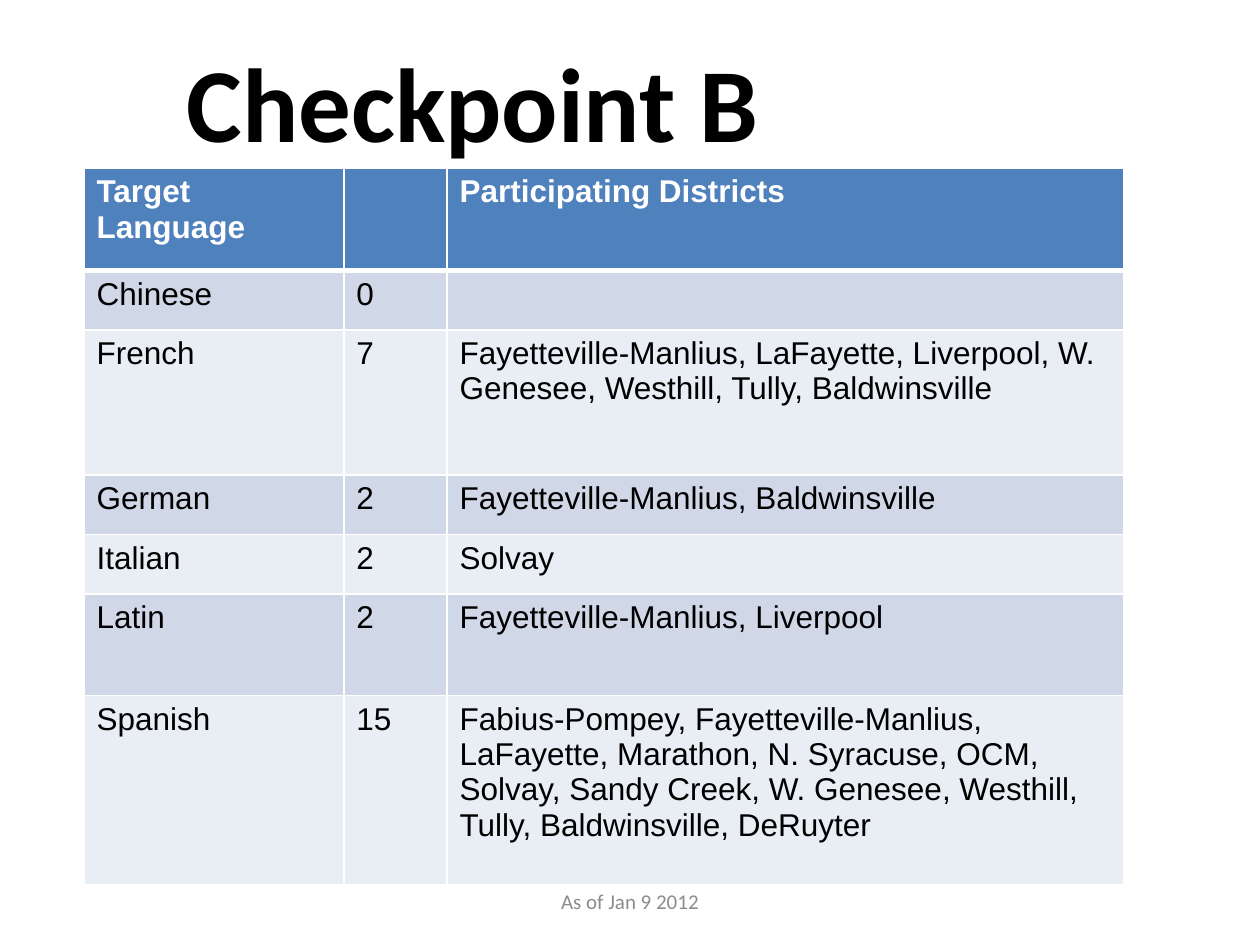
from lxml.etree import SubElement
from pptx import Presentation
from pptx.dml.color import RGBColor
from pptx.enum.text import MSO_ANCHOR as Anchor, MSO_AUTO_SIZE as AutoSize, PP_ALIGN as Align
from pptx.oxml.ns import qn
from pptx.util import Pt

COLORS = {
    "white": "FFFFFF", "black": "000000", "gray": "8C8C8C",
    "header": "4F81BD", "odd": "D0D8E8", "even": "E9EDF4",
}
COLUMN_WIDTHS = [148.5, 59, 386.5]
ROWS = [
    (58.5, "Target Language", "", "Participating Districts"),
    (34, "Chinese", "0", ""),
    (83, "French", "7", "Fayetteville-Manlius, LaFayette, Liverpool, W. Genesee, "
     "Westhill, Tully, Baldwinsville"),
    (34, "German", "2", "Fayetteville-Manlius, Baldwinsville"),
    (34, "Italian", "2", "Solvay"),
    (58, "Latin", "2", "Fayetteville-Manlius, Liverpool"),
    (108, "Spanish", "15", "Fabius-Pompey, Fayetteville-Manlius, LaFayette, Marathon, "
     "N. Syracuse, OCM, Solvay, Sandy Creek, W. Genesee, Westhill, Tully, "
     "Baldwinsville, DeRuyter"),
]


def set_attributes(target, values):
    for name, value in values.items():
        setattr(target, name, value)


def format_font(font, color, **values):
    set_attributes(font, values)
    font.color.rgb = RGBColor.from_string(COLORS[color])


def place_text(shape, box, text, anchor, color, **font_values):
    set_attributes(shape, dict(zip(("left", "top", "width", "height"), map(Pt, box))))
    frame = shape.text_frame
    set_attributes(frame, {"text": text, "word_wrap": True,
                           "auto_size": AutoSize.NONE, "vertical_anchor": anchor})
    paragraph = frame.paragraphs[0]
    paragraph.alignment = Align.CENTER
    format_font(paragraph.runs[0].font, color, name="Calibri", **font_values)


def add_borders(cell, widths):
    properties = cell._tc.get_or_add_tcPr()
    for side, width in widths.items():
        line = SubElement(properties, qn(f"a:ln{side}"), w=str(Pt(width)))
        fill = SubElement(line, qn("a:solidFill"))
        SubElement(fill, qn("a:srgbClr"), val=COLORS["white"])


def format_cell(cell, text, row_index):
    is_header = row_index == 0
    add_borders(cell, {"L": 1, "R": 1, "T": 3 if row_index == 1 else 1,
                       "B": 3 if is_header else 1})
    cell.fill.solid()
    fill = "header" if is_header else "odd" if row_index % 2 else "even"
    cell.fill.fore_color.rgb = RGBColor.from_string(COLORS[fill])
    cell.text = text
    format_font(cell.text_frame.paragraphs[0].font, "white" if is_header else "black",
                name="Arial", size=Pt(18), bold=is_header)


def add_district_table(slide):
    heights = [row[0] for row in ROWS]
    table = slide.shapes.add_table(
        len(ROWS), len(COLUMN_WIDTHS), Pt(48), Pt(96),
        Pt(sum(COLUMN_WIDTHS)), Pt(sum(heights))).table
    for column, width in zip(table.columns, COLUMN_WIDTHS):
        column.width = Pt(width)
    for row_index, (height, *texts) in enumerate(ROWS):
        row = table.rows[row_index]
        row.height = Pt(height)
        for cell, text in zip(row.cells, texts):
            format_cell(cell, text, row_index)


def main():
    presentation = Presentation()
    set_attributes(presentation, {"slide_width": Pt(720), "slide_height": Pt(540)})
    slide = presentation.slides.add_slide(presentation.slide_layouts[5])
    add_district_table(slide)
    date_box = slide.shapes.add_textbox(0, 0, 0, 0)
    place_text(date_box, (246, 500.5, 228, 28.75), "As of Jan 9 2012",
               Anchor.MIDDLE, "gray", size=Pt(12))
    place_text(slide.shapes.title, (24, 18, 492, 70), "Checkpoint B",
               Anchor.TOP, "black", size=Pt(60), bold=True)
    presentation.save("out.pptx")


if __name__ == "__main__":
    main()
